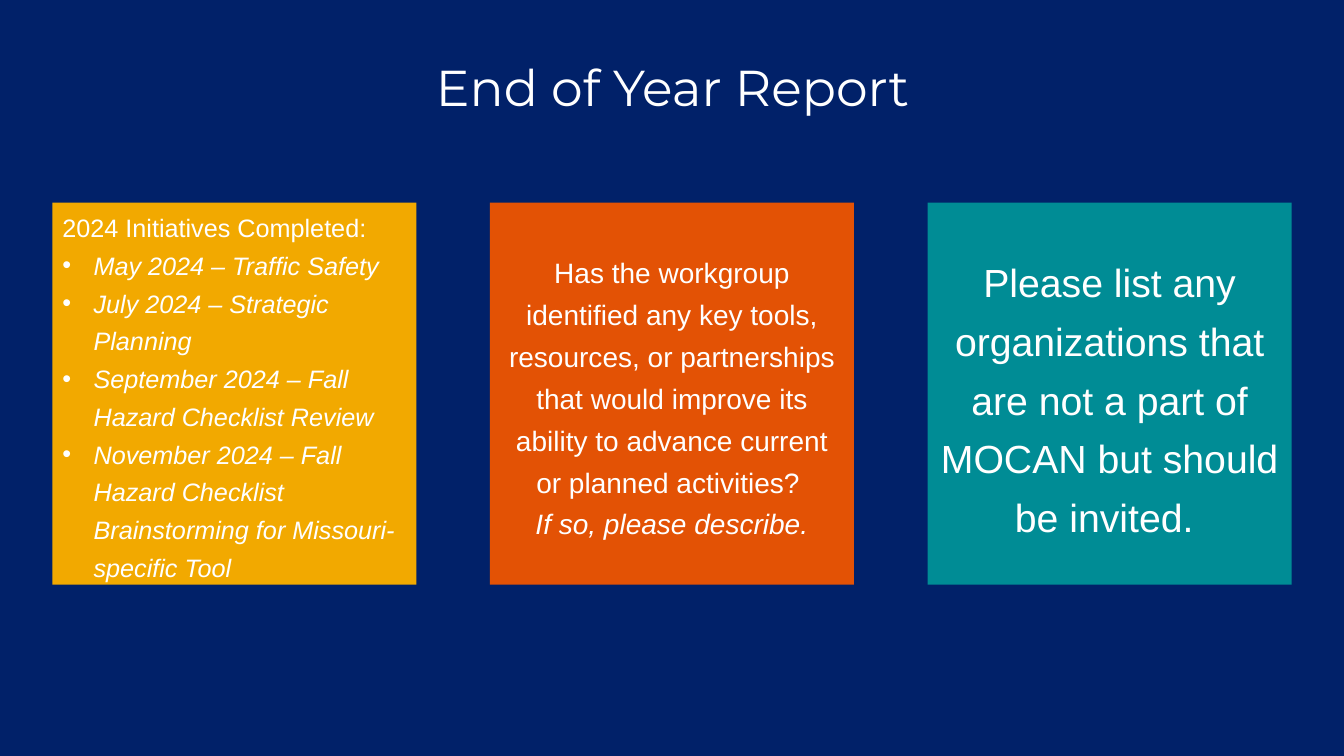
from pptx import Presentation
from pptx import util as u
from pptx.dml.color import RGBColor
from pptx.enum import shapes, text
from pptx.oxml.ns import qn
from lxml import etree

WIDE, HIGH = u.Inches(13.33), u.Inches(7.5)
NAVY, GOLD, RED, TEAL, WHITE = "012169", "F2A900", "E35205", "008C95", "FFFFFF"

# Card grid: equal columns at a fixed step
LEFT, STEP, TOP = u.Inches(0.52), u.Inches(4.34), u.Inches(2.01)
CARD_W, CARD_H = u.Inches(3.61), u.Inches(3.79)
INDENT = u.Inches(0.31)

DONE = [
    "May 2024 – Traffic Safety",
    "July 2024 – Strategic Planning",
    "September 2024 – Fall Hazard Checklist Review",
    "November 2024 – Fall Hazard Checklist Brainstorming for Missouri-specific Tool",
]
TOOLS = ("Has the workgroup identified any key tools, resources, or partnerships "
         "that would improve its ability to advance current or planned activities? ")
INVITE = "Please list any organizations that are not a part of MOCAN but should be invited. "


def paint(fill, code):
    fill.solid()
    fill.fore_color.rgb = RGBColor.from_string(code)


def write(para, words, size, font="Arial", italic=False, center=True,
          space=1.25, bullet=False):
    para.alignment = text.PP_ALIGN.CENTER if center else text.PP_ALIGN.LEFT
    para.line_spacing = space
    run = para.add_run()
    run.text = words
    run.font.size, run.font.name, run.font.italic = u.Pt(size), font, italic
    paint(run.font.fill, WHITE)
    if bullet:
        props = para._p.get_or_add_pPr()
        props.set("marL", str(INDENT))
        props.set("indent", str(-INDENT))
        etree.SubElement(props, qn("a:buFont")).set("typeface", "Arial")
        etree.SubElement(props, qn("a:buChar")).set("char", "•")


def card(slide, col, color, lines, **style):
    """Add a coloured card; each line is its words and extra format."""
    box = slide.shapes.add_shape(shapes.MSO_SHAPE.RECTANGLE,
                                 LEFT + col * STEP, TOP, CARD_W, CARD_H)
    box.shadow.inherit = False
    paint(box.fill, color)
    box.line.fill.background()
    frame = box.text_frame
    frame.word_wrap = True
    frame.vertical_anchor = text.MSO_ANCHOR.MIDDLE
    for i, (words, extra) in enumerate(lines):
        para = frame.add_paragraph() if i else frame.paragraphs[0]
        write(para, words, **style, **extra)


def head(slide, words):
    title = slide.shapes.title
    title.left, title.top = u.Inches(0.92), u.Inches(0.41)
    title.width, title.height = u.Inches(11.5), u.Inches(0.97)
    title.text_frame.vertical_anchor = text.MSO_ANCHOR.MIDDLE
    write(title.text_frame.paragraphs[0], words, 36, font="Montserrat", space=0.9)


def main():
    deck = Presentation()
    deck.slide_width, deck.slide_height = WIDE, HIGH
    slide = deck.slides.add_slide(deck.slide_layouts[5])
    paint(slide.background.fill, NAVY)

    # Title
    head(slide, "End of Year Report")

    # Three cards
    tasks = [(item, {"italic": True, "bullet": True}) for item in DONE]
    card(slide, 0, GOLD, [("2024 Initiatives Completed:", {})] + tasks,
         size=18, center=False)
    card(slide, 1, RED,
         [(TOOLS, {}), ("If so, please describe.", {"italic": True})], size=20)
    card(slide, 2, TEAL, [(INVITE, {})], size=28)

    deck.save("out.pptx")


if __name__ == "__main__":
    main()
